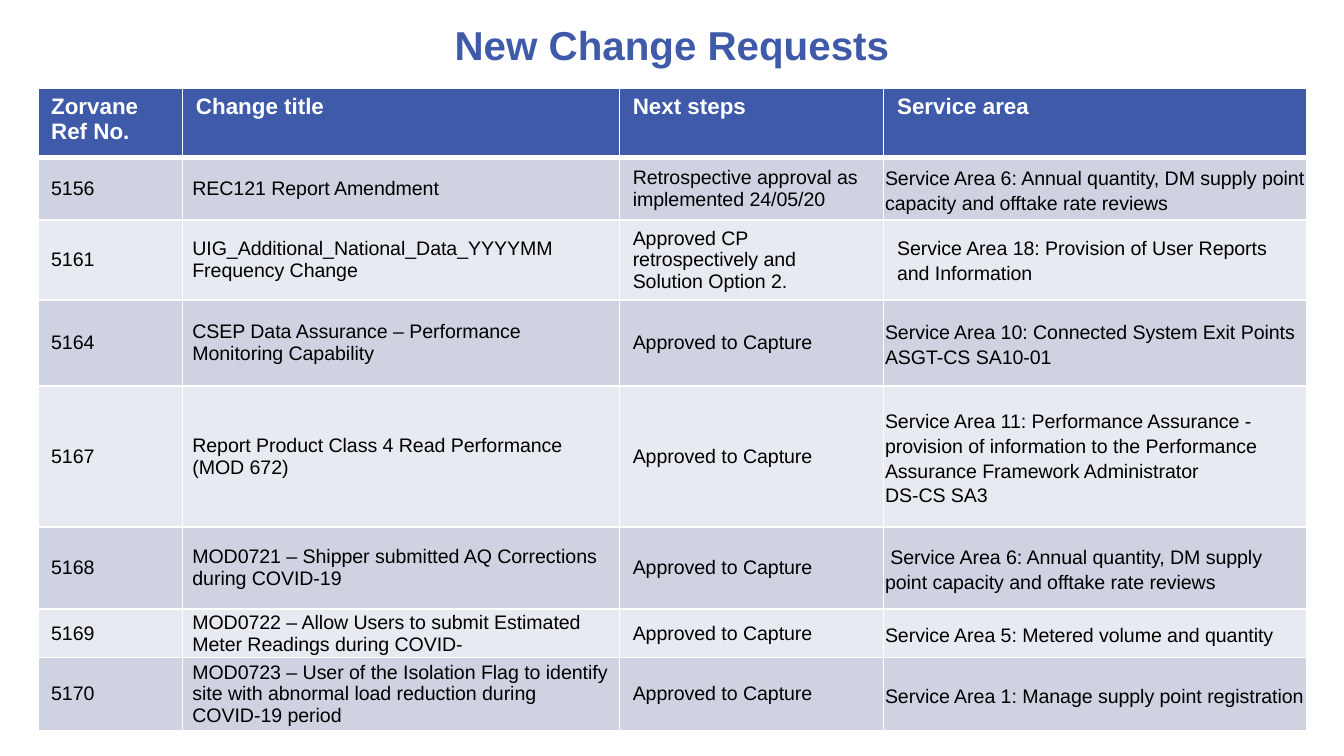
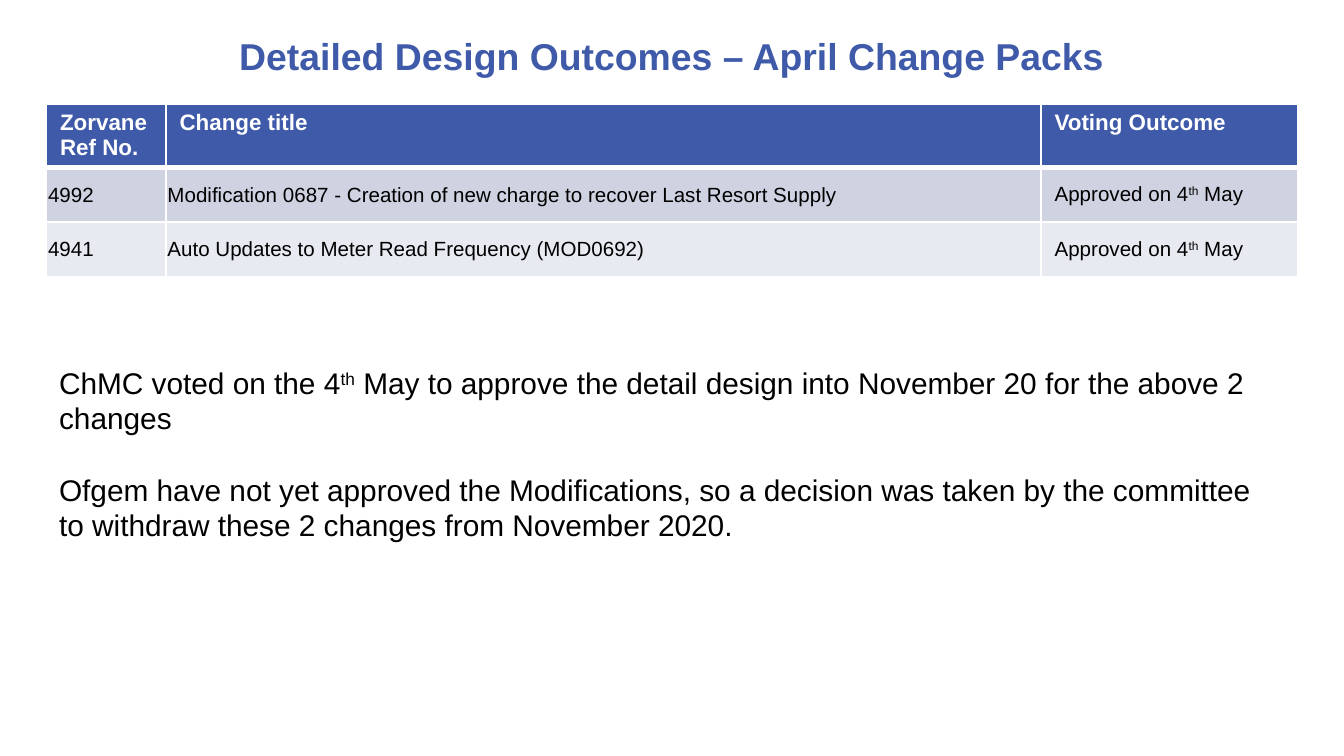
from lxml.etree import SubElement
from pptx import Presentation
from pptx.dml.color import RGBColor
from pptx.enum.text import MSO_ANCHOR, MSO_AUTO_SIZE, PP_ALIGN
from pptx.oxml.ns import qn
from pptx.util import Pt

BLUE = RGBColor(0x3E, 0x5A, 0xA8)
BAND_DARK = RGBColor(0xCE, 0xD2, 0xE1)
BAND_LIGHT = RGBColor(0xE8, 0xEA, 0xF1)
WHITE = RGBColor(0xFF, 0xFF, 0xFF)
BLACK = RGBColor(0, 0, 0)
FONT = "Arial"
TITLE_ONLY = 5

ROOMY = (7.2, 3.6, 7.2, 3.6)
SNUG = (5.3, 0, 5.3, 0)
TIGHT = (0.75, 0.75, 0.75, 0)

REF_HEADING = "Zorvane Ref No."
CAPTURE = "Approved to Capture"
VOTED = "Approved on 4^th^ May"

CHANGE_REQUESTS = [
    (REF_HEADING, "Change title", "Next steps", "Service area"),
    ("5156", "REC121 Report Amendment",
     "Retrospective approval as implemented 24/05/20",
     "Service Area 6: Annual quantity, DM supply point capacity and offtake rate reviews"),
    ("5161", "UIG_Additional_National_Data_YYYYMM Frequency Change",
     "Approved CP retrospectively and Solution Option 2.",
     "Service Area 18: Provision of User Reports and Information"),
    ("5164", "CSEP Data Assurance – Performance Monitoring Capability", CAPTURE,
     "Service Area 10: Connected System Exit Points\nASGT-CS SA10-01"),
    ("5167", "Report Product Class 4 Read Performance (MOD 672)", CAPTURE,
     "Service Area 11: Performance Assurance - provision of information to the "
     "Performance Assurance Framework Administrator\nDS-CS SA3"),
    ("5168", "MOD0721 – Shipper submitted AQ Corrections during COVID-19", CAPTURE,
     " Service Area 6: Annual quantity, DM supply point capacity and offtake rate reviews"),
    ("5169", "MOD0722 – Allow Users to submit Estimated Meter Readings during COVID-",
     CAPTURE, "Service Area 5: Metered volume and quantity"),
    ("5170", "MOD0723 – User of the Isolation Flag to identify site with abnormal "
     "load reduction during COVID-19 period", CAPTURE,
     "Service Area 1: Manage supply point registration"),
]
DESIGN_OUTCOMES = [
    (REF_HEADING, "Change title", "Voting Outcome"),
    ("4992", "Modification 0687 - Creation of new charge to recover Last Resort Supply", VOTED),
    ("4941", "Auto Updates to Meter Read Frequency (MOD0692)", VOTED),
]
VOTE_SUMMARY = (
    "ChMC voted on the 4^th^ May to approve the detail design into November 20 "
    "for the above 2 changes\n"
    "Ofgem have not yet approved the Modifications, so a decision was taken by the "
    "committee to withdraw these 2 changes from November 2020."
)


def write_text(frame, text, size, color, bold=False, line_spacing=None, gap=0):
    """Fill a frame with one paragraph per line; carets enclose superscripts."""
    for line_index, line in enumerate(text.split("\n")):
        paragraph = frame.add_paragraph() if line_index else frame.paragraphs[0]
        if line_spacing:
            paragraph.line_spacing = line_spacing
        if line_index and gap:
            paragraph.space_before = Pt(gap)
        for part_index, part in enumerate(line.split("^")):
            run = paragraph.add_run()
            run.text = part
            font = run.font
            font.name, font.size, font.bold = FONT, Pt(size), bold
            font.color.rgb = color
            if part_index % 2:
                font._element.set("baseline", "30000")


def add_titled_slide(presentation, title, box, size):
    """Add a slide with a centred blue title in the given box."""
    slide = presentation.slides.add_slide(presentation.slide_layouts[TITLE_ONLY])
    shape = slide.shapes.title
    shape.left, shape.top, shape.width, shape.height = map(Pt, box)
    frame = shape.text_frame
    frame.auto_size = MSO_AUTO_SIZE.NONE
    frame.vertical_anchor = MSO_ANCHOR.MIDDLE
    write_text(frame, title, size, BLUE, bold=True)
    frame.paragraphs[0].alignment = PP_ALIGN.CENTER
    return slide


def set_borders(cell, top, bottom):
    """Draw white borders round a cell, with its own top and bottom widths."""
    properties = cell._tc.get_or_add_tcPr()
    for side, width in (("L", 1), ("R", 1), ("T", top), ("B", bottom)):
        line = SubElement(properties, qn(f"a:ln{side}"), w=str(Pt(width)))
        fill = SubElement(line, qn("a:solidFill"))
        SubElement(fill, qn("a:srgbClr"), val=str(WHITE))


def style_cell(cell, row, margins):
    """Set the borders, band colour, margins and anchor of a cell."""
    set_borders(cell, top=3 if row == 1 else 1, bottom=1 if row else 3)
    cell.fill.solid()
    cell.fill.fore_color.rgb = (BAND_DARK if row % 2 else BAND_LIGHT) if row else BLUE
    cell.margin_left, cell.margin_top, cell.margin_right, cell.margin_bottom = map(Pt, margins)
    cell.vertical_anchor = MSO_ANCHOR.MIDDLE if row else MSO_ANCHOR.TOP


def add_banded_table(slide, rows, left, top, widths, heights, size,
                     margins, exceptions=None, spacings=None):
    """Add a table with a blue heading row and alternating bands."""
    table = slide.shapes.add_table(
        len(rows), len(widths), Pt(left), Pt(top), Pt(sum(widths)), Pt(sum(heights))).table
    for column, width in zip(table.columns, widths):
        column.width = Pt(width)
    for row_index, (texts, height) in enumerate(zip(rows, heights)):
        table.rows[row_index].height = Pt(height)
        for column_index, text in enumerate(texts):
            cell = table.cell(row_index, column_index)
            if row_index == 0:
                style_cell(cell, row_index, ROOMY)
                write_text(cell.text_frame, text, 12, WHITE, bold=True)
                continue
            position = (row_index, column_index)
            style_cell(cell, row_index, (exceptions or {}).get(position, margins[column_index]))
            write_text(cell.text_frame, text, size, BLACK,
                       line_spacing=(spacings or {}).get(column_index))


def add_summary(slide, text, left, top, width, height):
    """Add a wrapped text box of plain paragraphs."""
    shape = slide.shapes.add_textbox(Pt(left), Pt(top), Pt(width), Pt(height))
    frame = shape.text_frame
    frame.word_wrap = True
    frame.auto_size = MSO_AUTO_SIZE.SHAPE_TO_FIT_TEXT
    write_text(frame, text, 16, BLACK, gap=19)


def main():
    """Build both slides and save the presentation."""
    presentation = Presentation()
    presentation.slide_width, presentation.slide_height = Pt(720), Pt(405)

    slide = add_titled_slide(presentation, "New Change Requests", (36, 10, 648, 28), 21.6)
    add_banded_table(
        slide, CHANGE_REQUESTS, 20.2, 47,
        widths=(77.6, 234, 141.6, 226.8),
        heights=(37.2, 33.6, 43, 46, 75.6, 44, 26, 39),
        size=10.5, margins=(ROOMY, SNUG, ROOMY, TIGHT),
        exceptions={(2, 3): ROOMY}, spacings={3: 1.15})

    slide = add_titled_slide(
        presentation, "Detailed Design Outcomes – April Change Packs", (8.6, 10, 702.8, 40), 20)
    add_banded_table(
        slide, DESIGN_OUTCOMES, 25, 55.6,
        widths=(64, 468.8, 137.4), heights=(34, 29.2, 29.2),
        size=11, margins=(TIGHT, TIGHT, ROOMY))
    add_summary(slide, VOTE_SUMMARY, 24.6, 191.6, 670, 104.4)

    presentation.save("out.pptx")


if __name__ == "__main__":
    main()
